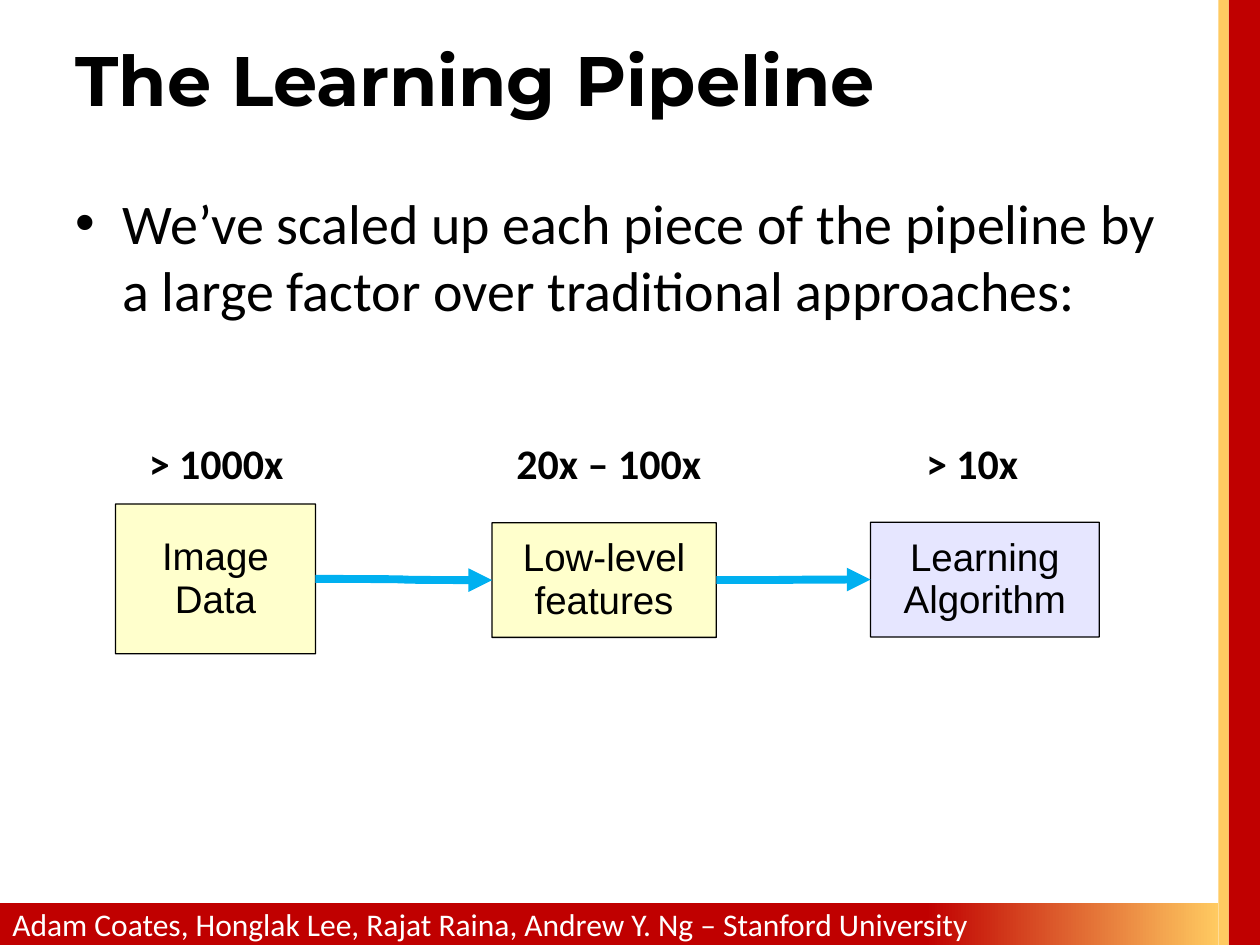
import lxml.etree
import pptx
import pptx.dml.color
import pptx.enum.shapes
import pptx.enum.text
import pptx.oxml.ns
import pptx.util
from pptx.util import Cm

RGBColor = pptx.dml.color.RGBColor
Shape = pptx.enum.shapes.MSO_SHAPE
Align = pptx.enum.text.PP_ALIGN
Anchor = pptx.enum.text.MSO_ANCHOR

RED = RGBColor(0xC0, 0x00, 0x00)
GOLD = RGBColor(0xFF, 0xCA, 0x61)
YELLOW = RGBColor(0xFF, 0xFF, 0xCC)
LAVENDER = RGBColor(0xE6, 0xE6, 0xFF)
BLUE = RGBColor(0x00, 0xB0, 0xF0)
BLACK = RGBColor(0x00, 0x00, 0x00)
WHITE = RGBColor(0xFF, 0xFF, 0xFF)

SLIDE_WIDTH, SLIDE_HEIGHT = 25.4, 19.05
LEFT_SITE, RIGHT_SITE = 1, 3


def add_child(parent, tag, **attributes):
    return lxml.etree.SubElement(parent, pptx.oxml.ns.qn(tag), attributes)


class SlideBuilder:
    body_font = "Calibri"
    title_font = "Montserrat"
    box_font = "Arial"

    def __init__(self, slide):
        self.slide = slide

    def set_text(self, shape, lines, size, font, color=BLACK, bold=False,
                 align=Align.LEFT, spacing=None):
        for index, line in enumerate(lines):
            frame = shape.text_frame
            paragraph = frame.add_paragraph() if index else frame.paragraphs[0]
            paragraph.text = line
            paragraph.alignment = align
            paragraph.line_spacing = spacing
            paragraph.font.size = pptx.util.Pt(size)
            paragraph.font.name = font
            paragraph.font.bold = bold
            paragraph.font.color.rgb = color

    def bar(self, left, top, width, height, color):
        shape = self.slide.shapes.add_shape(
            Shape.RECTANGLE, Cm(left), Cm(top), Cm(width), Cm(height))
        shape.shadow.inherit = False
        shape.line.fill.background()
        shape.fill.solid()
        shape.fill.fore_color.rgb = color
        return shape

    def footer(self, left, top, width, height, text):
        shape = self.bar(left, top, width, height, RED)
        shape.fill.gradient()
        shape.fill.gradient_angle = 0
        for stop, position, color in zip(
                shape.fill.gradient_stops, (0.76, 1), (RED, GOLD)):
            stop.position = position
            stop.color.rgb = color
        shape.text_frame.vertical_anchor = Anchor.MIDDLE
        shape.text_frame.word_wrap = True
        self.set_text(shape, [text], 18, self.body_font, WHITE)

    def text(self, left, top, width, height, text, size, font,
             bold=False, anchor=Anchor.TOP, wrap=True):
        box = self.slide.shapes.add_textbox(
            Cm(left), Cm(top), Cm(width), Cm(height))
        box.text_frame.word_wrap = wrap
        box.text_frame.vertical_anchor = anchor
        self.set_text(box, [text], size, font, bold=bold)
        return box

    def bullet(self, left, top, width, height, text):
        box = self.slide.shapes.add_textbox(
            Cm(left), Cm(top), Cm(width), Cm(height))
        box.text_frame.word_wrap = True
        indent = Cm(0.95)
        properties = box.text_frame.paragraphs[0]._p.get_or_add_pPr()
        properties.set("marL", str(indent))
        properties.set("indent", str(-indent))
        add_child(properties, "a:buFont", typeface="Arial")
        add_child(properties, "a:buChar", char="•")
        self.set_text(box, [text], 32, self.body_font)

    def stage(self, left, top, width, height, lines, color):
        """Draw one step of the pipeline."""
        shape = self.slide.shapes.add_shape(
            Shape.ROUNDED_RECTANGLE, Cm(left), Cm(top), Cm(width), Cm(height))
        shape.adjustments[0] = 0.002
        shape.shadow.inherit = False
        shape.fill.solid()
        shape.fill.fore_color.rgb = color
        shape.line.color.rgb = BLACK
        shape.line.width = pptx.util.Pt(0.75)
        frame = shape.text_frame
        frame.word_wrap = True
        frame.vertical_anchor = Anchor.MIDDLE
        frame.margin_left = frame.margin_right = Cm(0.23)
        frame.margin_top = frame.margin_bottom = Cm(0.1)
        self.set_text(shape, lines, 22, self.box_font, align=Align.CENTER,
                      spacing=0.93)
        return shape

    def arrow(self, source, target):
        connector = self.slide.shapes.add_connector(
            pptx.enum.shapes.MSO_CONNECTOR.CURVE, 0, 0, 0, 0)
        connector.begin_connect(source, RIGHT_SITE)
        connector.end_connect(target, LEFT_SITE)
        connector.line.color.rgb = BLUE
        connector.line.width = pptx.util.Pt(4.5)
        add_child(connector.line._get_or_add_ln(), "a:tailEnd", type="triangle")
        add_child(connector._element.spPr, "a:effectLst")


def main():
    presentation = pptx.Presentation()
    presentation.slide_width = Cm(SLIDE_WIDTH)
    presentation.slide_height = Cm(SLIDE_HEIGHT)
    builder = SlideBuilder(
        presentation.slides.add_slide(presentation.slide_layouts[6]))

    red_width, gold_width, footer_height = 0.63, 0.21, 0.84
    red_left = SLIDE_WIDTH - red_width
    gold_left = red_left - gold_width
    builder.bar(red_left, 0, red_width, SLIDE_HEIGHT, RED)
    builder.bar(gold_left, 0, gold_width, SLIDE_HEIGHT, GOLD)
    builder.footer(
        0, SLIDE_HEIGHT - footer_height, gold_left, footer_height,
        "Adam Coates, Honglak Lee, Rajat Raina, Andrew Y. Ng – Stanford University")

    builder.text(1.27, 0, 22.86, 3.18, "The Learning Pipeline", 40,
                 builder.title_font, bold=True, anchor=Anchor.MIDDLE)
    builder.bullet(
        1.27, 3.68, 22.86, 4.37,
        "We’ve scaled up each piece of the pipeline by a large factor "
        "over traditional approaches:")

    stages = [
        builder.stage(2.33, 10.16, 4.03, 3.02, ["Image", "Data"], YELLOW),
        builder.stage(9.92, 10.54, 4.52, 2.31, ["Low-level features"], YELLOW),
        builder.stage(17.55, 10.53, 4.61, 2.31, ["Learning", "Algorithm"],
                      LAVENDER),
    ]
    for source, target in zip(stages, stages[1:]):
        builder.arrow(source, target)

    for left, width, factor in ((2.75, 3.25, "> 1000x"),
                                (10.16, 4.26, "20x – 100x"),
                                (18.42, 2.39, "> 10x")):
        builder.text(left, 8.69, width, 1.27, factor, 24, builder.body_font,
                     bold=True, wrap=False)

    presentation.save("out.pptx")


if __name__ == "__main__":
    main()
